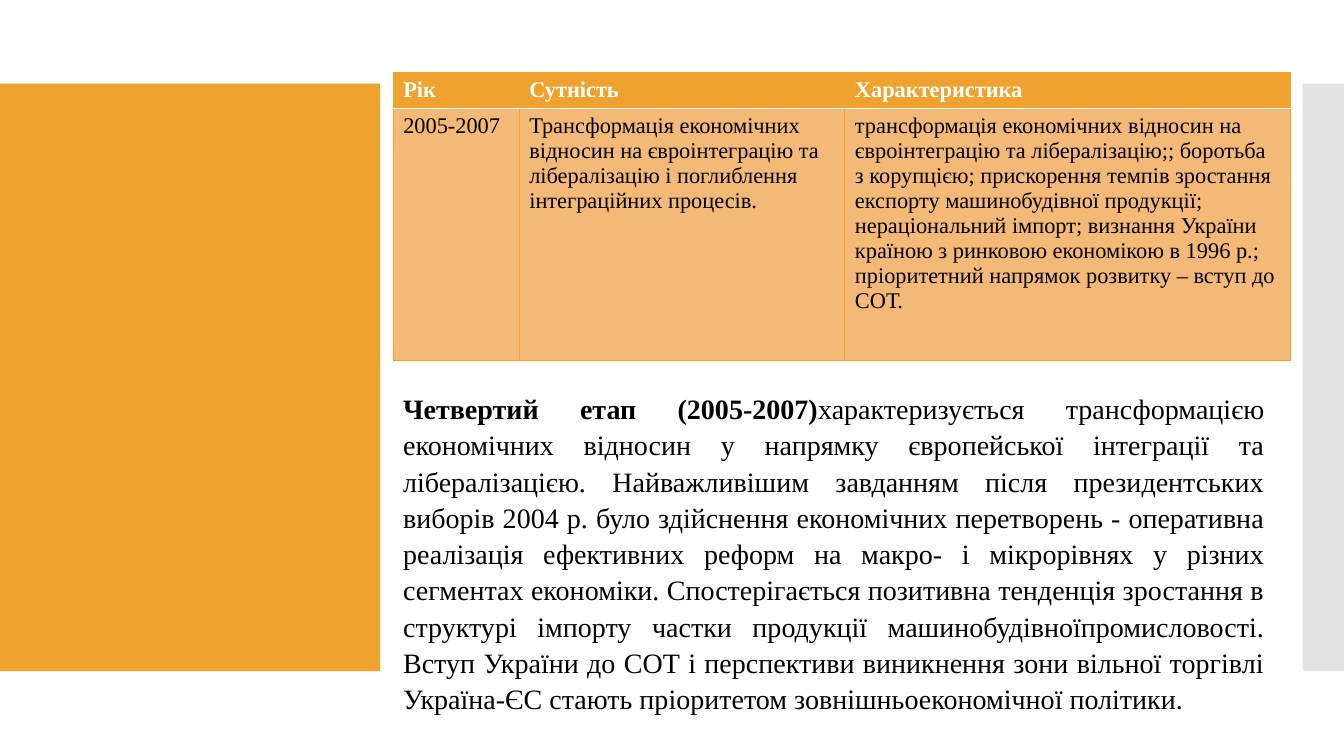
"""Builds a slide on the fourth stage (2005-2007) of Ukraine's economic relations."""
from lxml import etree
from pptx import Presentation
from pptx.dml.color import RGBColor
from pptx.enum.shapes import MSO_SHAPE
from pptx.enum.text import PP_ALIGN
from pptx.oxml.ns import qn
from pptx.util import Inches, Pt

COLORS = {"accent": "F0A22E", "cell": "F4B976", "side": "E3E3E3",
          "white": "FFFFFF", "black": "000000"}


def add_text(p, text, size=16, color="black", bold=False):
    r = p.add_run()
    r.text = text
    r.font.name = "Times New Roman"
    r.font.size = Pt(size)
    r.font.bold = bold
    r.font.color.rgb = RGBColor.from_string(COLORS[color])


def set_border(cell, side, color):
    ln = etree.SubElement(cell._tc.get_or_add_tcPr(), qn(f"a:ln{side}"), w=str(Pt(0.75)))
    fill = etree.SubElement(ln, qn("a:solidFill"))
    etree.SubElement(fill, qn("a:srgbClr"), val=COLORS[color])


prs = Presentation()
prs.slide_width, prs.slide_height = Inches(13.33), Inches(7.5)
s = prs.slides.add_slide(prs.slide_layouts[6])

for left, width, color in [(0, 3.77, "accent"), (12.92, 0.41, "side")]:
    sp = s.shapes.add_shape(MSO_SHAPE.RECTANGLE, Inches(left), Inches(0.83),
                            Inches(width), Inches(5.83))
    sp.shadow.inherit = False
    sp.fill.solid()
    sp.fill.fore_color.rgb = RGBColor.from_string(COLORS[color])
    sp.line.fill.background()

rows = [
    ["Рік", "Сутність", "Характеристика"],
    ["2005-2007",
     "Трансформація економічних відносин на євроінтеграцію та лібералізацію "
     "і поглиблення інтеграційних процесів.",
     "трансформація економічних відносин на євроінтеграцію та лібералізацію;; "
     "боротьба з корупцією; прискорення темпів зростання експорту машинобудівної "
     "продукції; нераціональний імпорт; визнання України країною з ринковою "
     "економікою в 1996 р.; пріоритетний напрямок розвитку – вступ до СОТ."],
]
table = s.shapes.add_table(2, 3, Inches(3.9), Inches(0.72), Inches(8.9), Inches(2.87)).table
for column, width in zip(table.columns, [1.25, 3.23, 4.42]):
    column.width = Inches(width)
for row, height in zip(table.rows, [0.36, 2.5]):
    row.height = Inches(height)

for i, texts in enumerate(rows):
    header = i == 0
    for j, text in enumerate(texts):
        cell = table.cell(i, j)
        add_text(cell.text_frame.paragraphs[0], text,
                 color="white" if header else "black", bold=header)
        for side in "LRTB":
            set_border(cell, side, "white" if (i, side) in [(0, "B"), (1, "T")] else "accent")
        cell.fill.solid()
        cell.fill.fore_color.rgb = RGBColor.from_string(COLORS["accent" if header else "cell"])

tf = s.shapes.add_textbox(Inches(3.9), Inches(3.81), Inches(8.74), Inches(3.13)).text_frame
tf.word_wrap = True
p = tf.paragraphs[0]
p.alignment = PP_ALIGN.JUSTIFY
p.line_spacing = 1.08
add_text(p, "Четвертий етап (2005-2007)", size=20, bold=True)
add_text(p, "характеризується трансформацією економічних відносин у напрямку "
            "європейської інтеграції та лібералізацією. Найважливішим завданням після "
            "президентських виборів 2004 р. було здійснення економічних перетворень - "
            "оперативна реалізація ефективних реформ на макро- і мікрорівнях у різних "
            "сегментах економіки. Спостерігається позитивна тенденція зростання в "
            "структурі імпорту частки продукції машинобудівноїпромисловості. Вступ "
            "України до СОТ і перспективи виникнення зони вільної торгівлі Україна-ЄС "
            "стають пріоритетом зовнішньоекономічної політики.", size=20)

prs.save("out.pptx")
